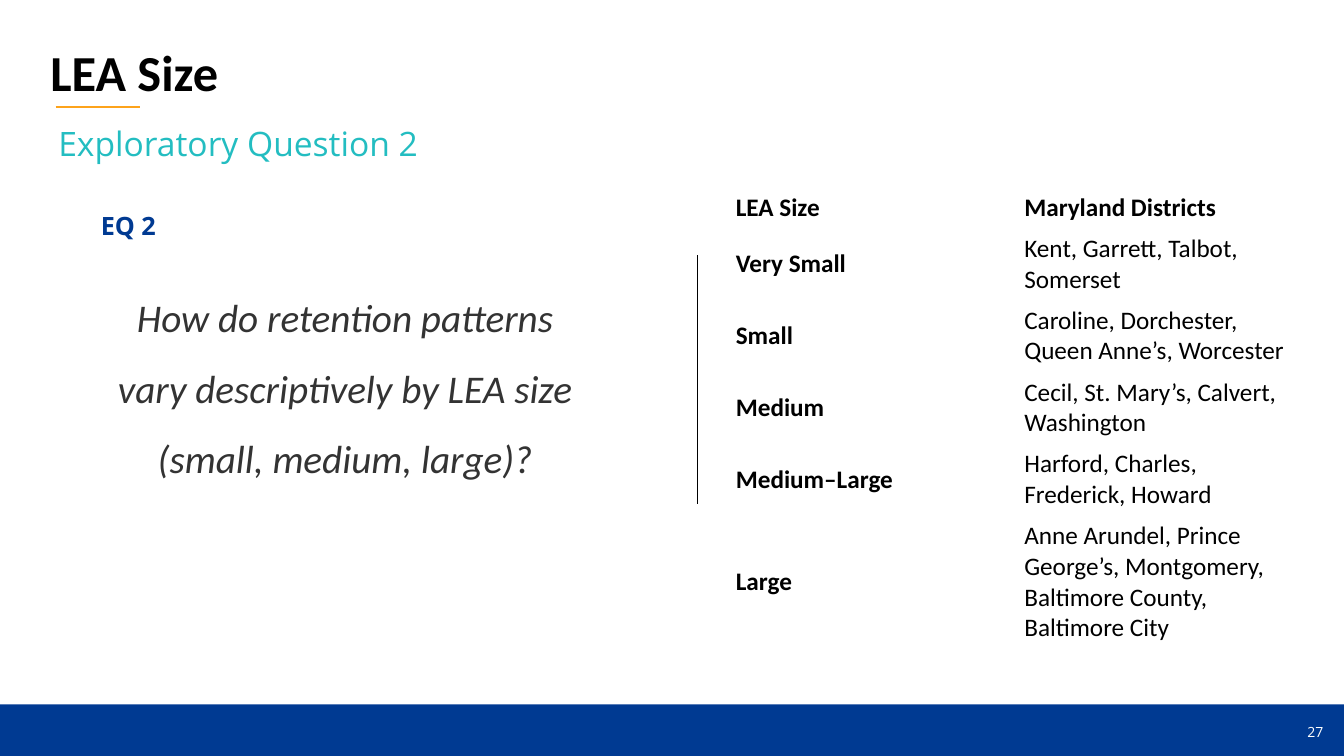
from dataclasses import dataclass

from lxml import etree
from pptx import Presentation
from pptx.dml.color import RGBColor
from pptx.enum import shapes, text
from pptx.oxml import ns
from pptx.util import Cm, Pt


@dataclass(frozen=True)
class Theme:
    black: str = "000000"
    white: str = "FFFFFF"
    navy: str = "003A92"
    teal: str = "23BDC1"
    amber: str = "FDA31B"
    gray: str = "333333"
    sans: str = "Calibri"
    open: str = "Open Sans"
    title: int = 36
    quote: int = 28
    sub: int = 24
    body: int = 18
    page: int = 10


THEME = Theme()
WIDE, HIGH = 33.87, 19.05
ROWS = [
    ("LEA Size", "Maryland Districts", 1.03),
    ("Very Small", "Kent, Garrett, Talbot, Somerset", 1.81),
    ("Small", "Caroline, Dorchester, Queen Anne’s, Worcester", 1.81),
    ("Medium", "Cecil, St. Mary’s, Calvert, Washington", 1.81),
    ("Medium–Large", "Harford, Charles, Frederick, Howard", 1.81),
    ("Large", "Anne Arundel, Prince George’s, Montgomery, "
              "Baltimore County, Baltimore City", 3.36),
]


def set_all(item, values):
    for name, value in values.items():
        setattr(item, name, value)


def style(para, size, color, face, **extra):
    set_all(para.font, {"size": Pt(size), "name": face, **extra})
    para.font.color.rgb = RGBColor.from_string(color)


def add_text(slide, words, box, look, frame=None, para=None):
    """Place one paragraph; look, frame and para hold format values."""
    area = slide.shapes.add_textbox(*map(Cm, box)).text_frame
    set_all(area, {"word_wrap": True, **(frame or {})})
    line = area.paragraphs[0]
    line.text = words
    set_all(line, para or {})
    style(line, **look)


def add_line(slide, start, end, color, width):
    line = slide.shapes.add_connector(
        shapes.MSO_CONNECTOR.STRAIGHT, *map(Cm, start + end))
    line.line.color.rgb = RGBColor.from_string(color)
    line.line.width = Pt(width)
    etree.SubElement(line._element.spPr, ns.qn("a:effectLst"))


def add_band(slide, top, color):
    """Fill the slide from top down to its lower edge."""
    band = slide.shapes.add_shape(
        shapes.MSO_SHAPE.RECTANGLE, 0, Cm(top), Cm(WIDE), Cm(HIGH - top))
    band.shadow.inherit = False
    band.fill.solid()
    band.fill.fore_color.rgb = RGBColor.from_string(color)
    band.line.fill.background()


def add_grid(slide, left, top, width, rows):
    high = sum(row[-1] for row in rows)
    grid = slide.shapes.add_table(
        len(rows), 2, Cm(left), Cm(top), Cm(2 * width), Cm(high)).table
    set_all(grid, {"first_row": False, "horz_banding": False})
    for col in grid.columns:
        col.width = Cm(width)
    for r, (*words, tall) in enumerate(rows):
        grid.rows[r].height = Cm(tall)
        for c, word in enumerate(words):
            cell = grid.cell(r, c)
            cell.fill.background()
            cell.text = word
            cell.vertical_anchor = text.MSO_ANCHOR.MIDDLE
            style(cell.text_frame.paragraphs[0], THEME.body, THEME.black,
                  THEME.sans, bold=r == 0 or c == 0)


def main():
    deck = Presentation()
    set_all(deck, {"slide_width": Cm(WIDE), "slide_height": Cm(HIGH)})
    slide = deck.slides.add_slide(deck.slide_layouts[6])
    mid = {"vertical_anchor": text.MSO_ANCHOR.MIDDLE}

    add_line(slide, (17.58, 6.43), (17.58, 12.7), THEME.black, 0.5)
    add_band(slide, 17.75, THEME.navy)
    add_text(slide, "27", (29.13, 18.08, 4.47, 0.71),
             dict(size=THEME.page, color=THEME.white, face=THEME.open),
             mid, {"alignment": text.PP_ALIGN.RIGHT})
    add_text(slide, "LEA Size", (1.02, 0.76, 31.8, 1.8),
             dict(size=THEME.title, color=THEME.black, face=THEME.sans,
                  bold=True),
             {"vertical_anchor": text.MSO_ANCHOR.BOTTOM, "margin_bottom": 0})
    add_line(slide, (1.4, 2.69), (3.53, 2.69), THEME.amber, 1.5)
    add_text(slide, "How do retention patterns vary descriptively by LEA size "
             "(small, medium, large)?", (2.46, 6.68, 12.47, 5.08),
             dict(size=THEME.quote, color=THEME.gray, face=THEME.sans,
                  italic=True),
             para={"alignment": text.PP_ALIGN.CENTER, "line_spacing": 1.5})
    add_text(slide, "EQ 2", (2.29, 5.18, 12.47, 1.17),
             dict(size=THEME.body, color=THEME.navy, face=THEME.open,
                  bold=True))
    add_text(slide, "Exploratory Question 2", (1.22, 3, 28.83, 1.22),
             dict(size=THEME.sub, color=THEME.teal, face=THEME.open), mid)
    add_grid(slide, 18.29, 4.72, 7.27, ROWS)
    deck.save("out.pptx")


if __name__ == "__main__":
    main()
